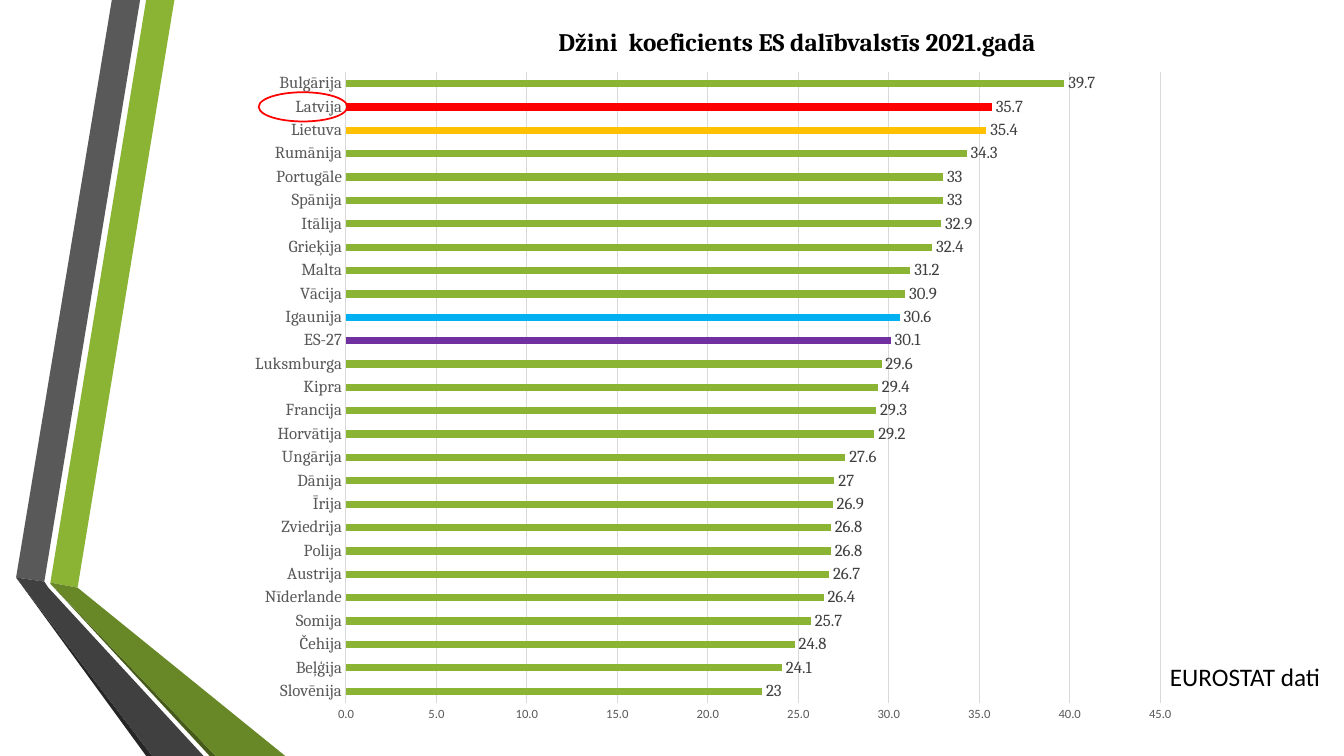
from dataclasses import dataclass

from lxml.etree import SubElement
from pptx import Presentation
from pptx.chart.data import CategoryChartData
from pptx.dml.color import RGBColor
from pptx.enum.chart import XL_CHART_TYPE as ChartType
from pptx.enum.chart import XL_LABEL_POSITION as LabelPosition
from pptx.enum.chart import XL_TICK_MARK as TickMark
from pptx.enum.shapes import MSO_SHAPE as Shape
from pptx.enum.text import PP_ALIGN as Align
from pptx.oxml.ns import qn
from pptx.util import Inches, Pt


@dataclass(frozen=True)
class Theme:
    green: str = "8BB434"
    dark_green: str = "688727"
    deep_green: str = "465A1A"
    gray: str = "595959"
    dark_gray: str = "404040"
    deep_gray: str = "262626"
    grid: str = "D9D9D9"
    black: str = "000000"
    red: str = "FF0000"
    amber: str = "FFC000"
    blue: str = "00B0F0"
    purple: str = "7030A0"
    heading_font: str = "Cambria"
    body_font: str = "Calibri"
    heading_size: int = 18
    label_size: int = 12
    axis_size: int = 9


THEME = Theme()

RIBBONS = [
    (THEME.green, [(0.5, 5.78), (0.77, 5.83), (1.73, 0), (1.45, 0)]),
    (THEME.gray, [(1.39, 0), (1.11, 0), (0.16, 5.73), (0.44, 5.77)]),
    (THEME.deep_gray, [(0.16, 5.73), (1.45, 7.5), (1.51, 7.5)]),
    (THEME.deep_green, [(0.5, 5.79), (2.08, 7.5), (2.14, 7.5)]),
    (THEME.dark_green, [(0.5, 5.78), (0.5, 5.79), (2.14, 7.5), (2.83, 7.5), (0.77, 5.83)]),
    (THEME.dark_gray, [(0.16, 5.73), (1.51, 7.5), (2.02, 7.5), (0.48, 5.83), (0.44, 5.77)]),
]

GINI = {
    "Slovēnija": 23, "Beļģija": 24.1, "Čehija": 24.8, "Somija": 25.7,
    "Nīderlande": 26.4, "Austrija": 26.7, "Polija": 26.8, "Zviedrija": 26.8,
    "Īrija": 26.9, "Dānija": 27, "Ungārija": 27.6, "Horvātija": 29.2,
    "Francija": 29.3, "Kipra": 29.4, "Luksmburga": 29.6, "ES-27": 30.1,
    "Igaunija": 30.6, "Vācija": 30.9, "Malta": 31.2, "Grieķija": 32.4,
    "Itālija": 32.9, "Spānija": 33, "Portugāle": 33, "Rumānija": 34.3,
    "Lietuva": 35.4, "Latvija": 35.7, "Bulgārija": 39.7,
}

HIGHLIGHTS = {
    "ES-27": THEME.purple,
    "Igaunija": THEME.blue,
    "Lietuva": THEME.amber,
    "Latvija": THEME.red,
}


def paint(fill, color):
    fill.solid()
    fill.fore_color.rgb = RGBColor.from_string(color)


def style_font(font, name, size, color, bold=False):
    font.name = name
    font.size = Pt(size)
    font.bold = bold
    font.color.rgb = RGBColor.from_string(color)


def style_line(line, color, width):
    line.color.rgb = RGBColor.from_string(color)
    line.width = Pt(width)


def add_ribbon(slide, color, points):
    corners = [(Inches(x), Inches(y)) for x, y in points]
    builder = slide.shapes.build_freeform(*corners[0])
    builder.add_line_segments(corners[1:], close=True)
    shape = builder.convert_to_shape()
    shape.shadow.inherit = False
    paint(shape.fill, color)
    shape.line.fill.background()


def add_text(slide, box, text, font_name, bold=False, align=Align.LEFT):
    frame = slide.shapes.add_textbox(*map(Inches, box)).text_frame
    frame.word_wrap = True
    paragraph = frame.paragraphs[0]
    paragraph.alignment = align
    run = paragraph.add_run()
    run.text = text
    style_font(run.font, font_name, THEME.heading_size, THEME.black, bold)


def add_ring(slide, box, rotation):
    shape = slide.shapes.add_shape(Shape.OVAL, *map(Inches, box))
    shape.rotation = rotation
    shape.shadow.inherit = False
    shape.fill.background()
    style_line(shape.line, THEME.red, 1.25)


def set_plot_area(chart, **bounds):
    plot_area = chart.plots[0]._element.getparent()
    layout = plot_area.find(qn("c:layout"))
    if layout is None:
        layout = SubElement(plot_area, qn("c:layout"))
        plot_area.insert(0, layout)
    manual = SubElement(layout, qn("c:manualLayout"))
    settings = {"layoutTarget": "inner", "xMode": "edge", "yMode": "edge", **bounds}
    for tag, value in settings.items():
        SubElement(manual, qn(f"c:{tag}")).set("val", str(value))


def style_axes(chart):
    category_axis, value_axis = chart.category_axis, chart.value_axis
    for axis in (category_axis, value_axis):
        axis.major_tick_mark = axis.minor_tick_mark = TickMark.NONE
    style_font(category_axis.tick_labels.font, THEME.heading_font, THEME.label_size, THEME.gray)
    style_line(category_axis.format.line, THEME.grid, 0.75)

    value_axis.minimum_scale, value_axis.maximum_scale, value_axis.major_unit = 0, 45, 5
    value_axis.has_major_gridlines = True
    style_line(value_axis.major_gridlines.format.line, THEME.grid, 0.75)
    value_axis.format.line.fill.background()
    labels = value_axis.tick_labels
    labels.number_format, labels.number_format_is_linked = "0.0", False
    style_font(labels.font, THEME.body_font, THEME.axis_size, THEME.gray)


def style_bars(plot):
    plot.gap_width = 219
    plot.vary_by_categories = False
    series = plot.series[0]
    series.invert_if_negative = False
    paint(series.format.fill, THEME.green)
    for index, country in enumerate(GINI):
        if country in HIGHLIGHTS:
            paint(series.points[index].format.fill, HIGHLIGHTS[country])

    labels = series.data_labels
    labels.show_value = True
    labels.position = LabelPosition.OUTSIDE_END
    labels.number_format, labels.number_format_is_linked = "General", False
    style_font(labels.font, THEME.heading_font, THEME.label_size, THEME.dark_gray)


def add_gini_chart(slide, box):
    data = CategoryChartData()
    data.categories = list(GINI)
    data.add_series("Series 1", list(GINI.values()))
    chart = slide.shapes.add_chart(ChartType.BAR_CLUSTERED, *map(Inches, box), data).chart
    chart.has_title = False
    chart.has_legend = False
    style_font(chart.font, THEME.body_font, 10, THEME.black)
    style_axes(chart)
    style_bars(chart.plots[0])
    set_plot_area(chart, x=0.115, y=0.02, w=0.851, h=0.933)


def main():
    presentation = Presentation()
    presentation.slide_width, presentation.slide_height = Inches(13.33), Inches(7.5)
    slide = presentation.slides.add_slide(presentation.slide_layouts[6])
    for color, points in RIBBONS:
        add_ribbon(slide, color, points)
    add_gini_chart(slide, (2.34, 0.58, 9.49, 6.71))
    add_text(slide, (5.44, 0.21, 5.17, 0.4), "Džini  koeficients ES dalībvalstīs 2021.gadā",
             THEME.heading_font, bold=True)
    add_text(slide, (10.61, 6.51, 2.58, 0.4), "EUROSTAT dati", THEME.body_font, align=Align.RIGHT)
    add_ring(slide, (2.86, 0.62, 0.29, 0.88), 90)
    presentation.save("out.pptx")


if __name__ == "__main__":
    main()
